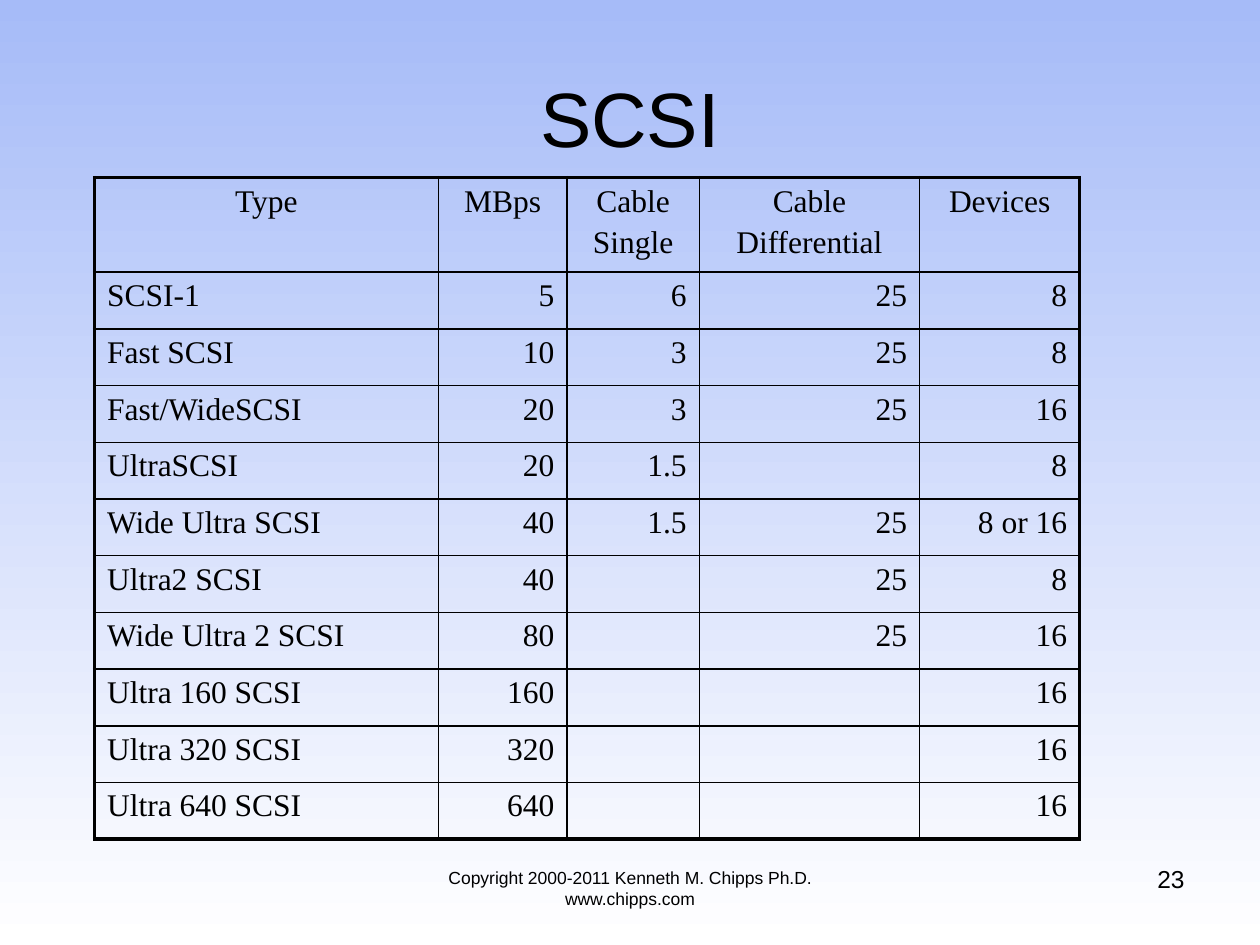
import dataclasses

import lxml.etree
import pptx
import pptx.dml.color
import pptx.enum.text
import pptx.oxml.ns
import pptx.util

ALIGN = pptx.enum.text.PP_ALIGN
ANCHOR = pptx.enum.text.MSO_ANCHOR


@dataclasses.dataclass(frozen=True)
class Theme:
    ink: str = "000000"
    sky: str = "A6BBF8"
    horizon: str = "FFFFFF"
    heading_font: str = "Arial"
    table_font: str = "Times New Roman"
    title_size: float = 44
    table_size: float = 18
    footer_size: float = 10
    number_size: float = 14
    line_gap: float = 3.6
    frame_width: float = 2.25
    rule_width: float = 1


THEME = Theme()
SLIDE_WIDTH, SLIDE_HEIGHT = 10, 7.5
TABLE_LEFT, TABLE_TOP = 0.75, 1.41
COLUMN_WIDTHS = [2.73, 1.02, 1.05, 1.75, 1.27]
HEADER_HEIGHT, ROW_HEIGHT = 0.69, 0.45

HEADER = ["Type", "MBps", "Cable\nSingle", "Cable\nDifferential", "Devices"]
STANDARDS = [
    ["SCSI-1", "5", "6", "25", "8"],
    ["Fast SCSI", "10", "3", "25", "8"],
    ["Fast/WideSCSI", "20", "3", "25", "16"],
    ["UltraSCSI", "20", "1.5", "", "8"],
    ["Wide Ultra SCSI", "40", "1.5", "25", "8 or 16"],
    ["Ultra2 SCSI", "40", "", "25", "8"],
    ["Wide Ultra 2 SCSI", "80", "", "25", "16"],
    ["Ultra 160 SCSI", "160", "", "", "16"],
    ["Ultra 320 SCSI", "320", "", "", "16"],
    ["Ultra 640 SCSI", "640", "", "", "16"],
]


def rgb(value):
    return pptx.dml.color.RGBColor.from_string(value)


def paint_background(slide):
    fill = slide.background.fill
    fill.gradient()
    fill.gradient_angle = 270
    for stop, colour in zip(fill.gradient_stops, (THEME.sky, THEME.horizon)):
        stop.color.rgb = rgb(colour)


def format_text(frame, font, size, align):
    for index, paragraph in enumerate(frame.paragraphs):
        paragraph.alignment = align
        if index:
            paragraph.space_before = pptx.util.Pt(THEME.line_gap)
        for run in paragraph.runs:
            run.font.name = font
            run.font.size = pptx.util.Pt(size)
            run.font.color.rgb = rgb(THEME.ink)


def add_text(slide, text, box, size, align, anchor=ANCHOR.TOP):
    """Place text in a box given as left, top, width, height in inches."""
    frame = slide.shapes.add_textbox(*map(pptx.util.Inches, box)).text_frame
    frame.word_wrap = True
    frame.vertical_anchor = anchor
    frame.text = text
    format_text(frame, THEME.heading_font, size, align)


def set_borders(cell, widths):
    """Draw the cell's edges; widths maps each of L, R, T, B to points."""
    properties = cell._tc.get_or_add_tcPr()
    qn = pptx.oxml.ns.qn
    for position, side in enumerate("LRTB"):
        line = lxml.etree.Element(
            qn(f"a:ln{side}"), w=str(int(pptx.util.Pt(widths[side])))
        )
        fill = lxml.etree.SubElement(line, qn("a:solidFill"))
        lxml.etree.SubElement(fill, qn("a:srgbClr"), val=THEME.ink)
        properties.insert(position, line)


def add_standards_table(slide):
    rows = [HEADER] + STANDARDS
    heights = [HEADER_HEIGHT] + [ROW_HEIGHT] * len(STANDARDS)
    box = (TABLE_LEFT, TABLE_TOP, sum(COLUMN_WIDTHS), sum(heights))
    table = slide.shapes.add_table(
        len(rows), len(HEADER), *map(pptx.util.Inches, box)
    ).table
    table.first_row = table.horz_banding = False
    for column, width in zip(table.columns, COLUMN_WIDTHS):
        column.width = pptx.util.Inches(width)
    for row, height in zip(table.rows, heights):
        row.height = pptx.util.Inches(height)

    last_row, last_column = len(rows) - 1, len(HEADER) - 1
    for r, values in enumerate(rows):
        for c, value in enumerate(values):
            cell = table.cell(r, c)
            cell.fill.background()
            cell.text_frame.text = value
            body_align = ALIGN.RIGHT if c else ALIGN.LEFT
            align = body_align if r else ALIGN.CENTER
            format_text(cell.text_frame, THEME.table_font, THEME.table_size, align)
            on_frame = {"L": c == 0, "R": c == last_column,
                        "T": r == 0, "B": r == last_row}
            set_borders(cell, {
                side: THEME.frame_width if outer else THEME.rule_width
                for side, outer in on_frame.items()
            })


def main():
    deck = pptx.Presentation()
    deck.slide_width = pptx.util.Inches(SLIDE_WIDTH)
    deck.slide_height = pptx.util.Inches(SLIDE_HEIGHT)
    slide = deck.slides.add_slide(deck.slide_layouts[6])
    paint_background(slide)
    add_text(slide, "SCSI", (0.5, 0.3, 9, 1.25), THEME.title_size,
             ALIGN.CENTER, ANCHOR.MIDDLE)
    add_standards_table(slide)
    add_text(slide, "Copyright 2000-2011 Kenneth M. Chipps Ph.D. www.chipps.com",
             (3, 6.83, 4, 0.52), THEME.footer_size, ALIGN.CENTER)
    add_text(slide, "23", (7.17, 6.81, 2.33, 0.52), THEME.number_size, ALIGN.RIGHT)
    deck.save("out.pptx")


if __name__ == "__main__":
    main()
